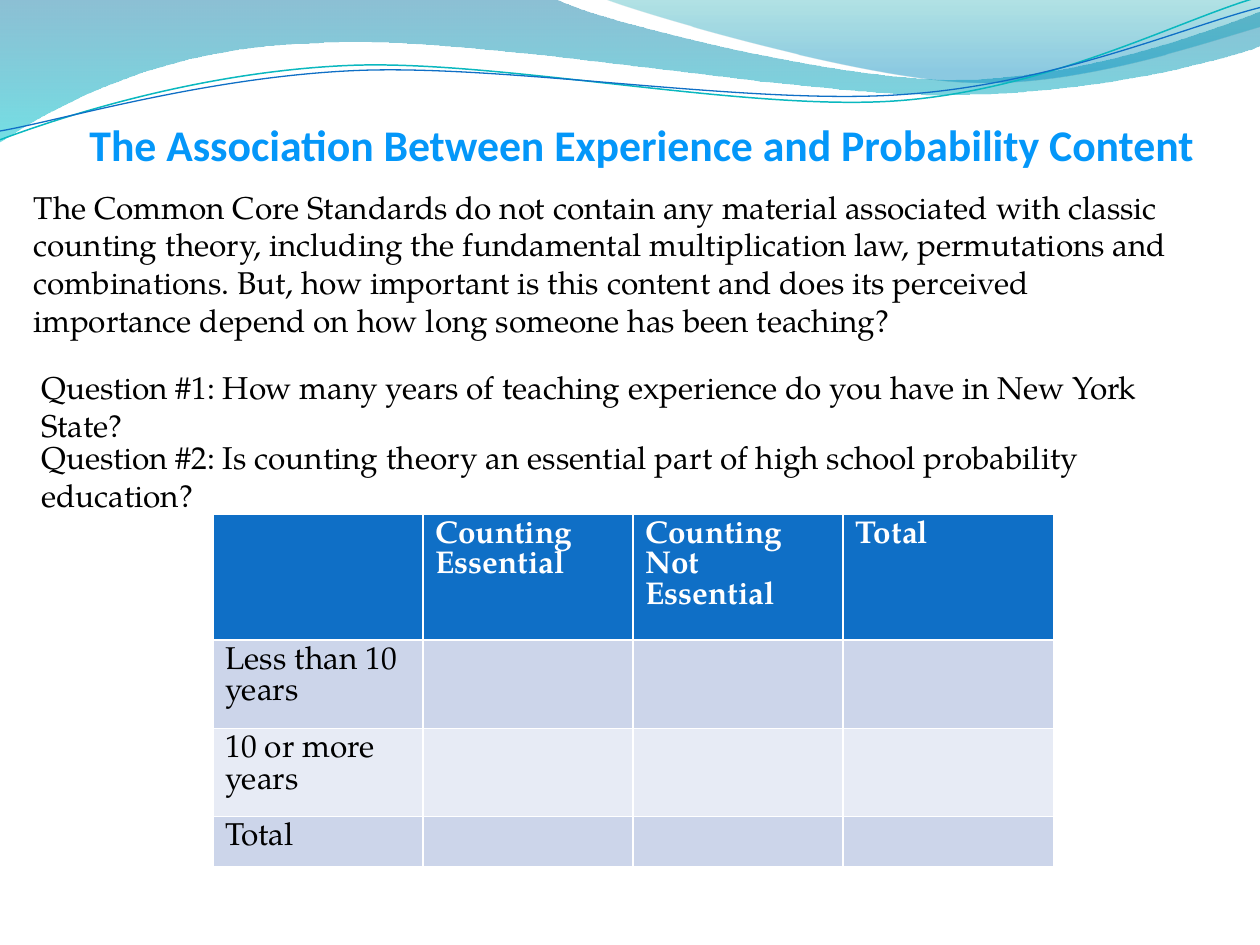
from dataclasses import dataclass

from lxml.etree import SubElement
from pptx import Presentation
from pptx.dml.color import RGBColor
from pptx.enum.text import MSO_ANCHOR
from pptx.oxml.ns import qn
from pptx.util import Cm, Pt

HUES = {
    "white": "FFFFFF", "black": "000000", "title": "0497F9", "blue": "0F6FC6",
    "teal": "0AB8BF", "deep": "0074A1", "aqua": "00C6CF", "sea": "00A1A9",
    "sky": "008BBF", "band": "CCD5EA", "pale": "E7EBF5",
}
SERIF = "TeX Gyre Pagella"
GRAIN = 1000


@dataclass
class Stop:
    """One gradient stop: place, hue and opacity in percent."""
    at: float
    hue: str
    alpha: int


@dataclass
class Wave:
    """A curved band or line, in inches; six numbers make a Bezier."""
    start: tuple
    steps: list
    stops: tuple = ()
    hue: str = ""
    width: float = 0


@dataclass
class Note:
    """A text box, in inches."""
    box: tuple
    text: str
    size: int = 18
    face: str = SERIF
    hue: str = "black"
    title: bool = False


WAVES = [
    Wave((0, 0), [
        (4.4, -0.01),
        (4.76, 0.17, 6.64, 0.63, 7.58, 0.63), (8.53, 0.63, 9.58, 0.26, 10, 0.09),
        (10.01, 0.36),
        (9.83, 0.44, 8.7, 0.76, 7.46, 0.75), (6.22, 0.75, 3.82, 0.28, 2.57, 0.34),
        (1.29, 0.36, 0.46, 0.83, -0.01, 1.13),
        (0, 0),
    ], stops=(Stop(0, "deep", 45), Stop(1, "aqua", 55))),
    Wave((4.79, -0.01), [
        (5.09, 0.11, 6.82, 0.62, 7.69, 0.65), (8.56, 0.69, 9.61, 0.32, 10, 0.21),
        (10, 0), (4.79, -0.01),
    ], stops=(Stop(0, "sea", 30), Stop(0.8, "sky", 45))),
    Wave((0, 1.11), [
        (0.48, 0.93, 1.58, 0.57, 2.77, 0.52), (3.95, 0.47, 5.93, 0.89, 7.13, 0.8),
        (8.33, 0.71, 9.38, 0.15, 9.98, -0.02),
    ], hue="teal", width=0.85),
    Wave((0, 1.04), [
        (0.47, 0.96, 1.64, 0.61, 2.83, 0.56), (4.03, 0.51, 5.97, 0.84, 7.17, 0.75),
        (8.36, 0.67, 9.41, 0.21, 10, 0.06),
    ], hue="blue", width=0.75),
]
NOTES = [
    Note((0.71, 0.1, 10.99, 1.25),
         "The Association Between Experience and Probability Content",
         25, "Calibri", "title", True),
    Note((0.17, 1.44, 9.39, 1.31),
         "The Common Core Standards do not contain any material associated with "
         "classic counting theory, including the fundamental multiplication law, "
         "permutations and combinations. But, how important is this content and "
         "does its perceived importance depend on how long someone has been teaching?"),
    Note((0.23, 2.87, 9.32, 0.4),
         "Question #1: How many years of teaching experience do you have in New York State?"),
    Note((0.23, 3.43, 9.57, 0.4),
         "Question #2: Is counting theory an essential part of high school "
         "probability education?"),
]
HEADS = ["", "Counting\nEssential", "Counting\nNot Essential", "Total"]
SIDES = ["Less than 10 years", "10 or more years", "Total"]
ROWS = [HEADS] + [[side, "", "", ""] for side in SIDES]
HIGHS = [1, 0.7, 0.7, 0.4]
FILLS = ["blue", "band", "pale", "band"]


def size(inch: float) -> Cm:
    """Turn inches into a length."""
    return Cm(inch * 2.54)


def color(hue: str) -> RGBColor:
    """Look up a hue."""
    return RGBColor.from_string(HUES[hue])


def bend(shape, steps: list) -> None:
    """Turn each run of three straight segments of a curved step into a Bezier."""
    lines = iter(list(shape._element.spPr.iter(qn("a:lnTo"))))
    for step in steps:
        group = [next(lines) for _ in range(len(step) // 2)]
        if len(group) == 3:
            first = group[0]
            cubic = SubElement(first.getparent(), qn("a:cubicBezTo"))
            first.addprevious(cubic)
            for line in group:
                cubic.append(line[0])
                line.getparent().remove(line)


def draw_wave(slide, wave: Wave) -> None:
    """Draw one wave as a filled band or an open line."""
    dots = [(step[i] * GRAIN, step[i + 1] * GRAIN)
            for step in wave.steps for i in range(0, len(step), 2)]
    left, top = wave.start
    pen = slide.shapes.build_freeform(left * GRAIN, top * GRAIN, size(1) / GRAIN)
    pen.add_line_segments(dots, close=bool(wave.stops))
    shape = pen.convert_to_shape()
    bend(shape, wave.steps)
    shape.shadow.inherit = False
    if not wave.stops:
        shape.fill.background()
        shape.line.color.rgb = color(wave.hue)
        shape.line.width = Pt(wave.width)
        return
    shape.line.fill.background()
    shape.fill.gradient()
    shape.fill.gradient_angle = 270
    for mark, stop in zip(shape.fill.gradient_stops, wave.stops):
        mark.position = stop.at
        mark.color.rgb = color(stop.hue)
    for node, stop in zip(shape._element.spPr.iter(qn("a:srgbClr")), wave.stops):
        SubElement(node, qn("a:alpha"), val=str(stop.alpha * 1000))


def style(para, points: int, face: str, hue: str, bold: bool) -> None:
    """Set the font of a paragraph."""
    font = para.font
    font.size, font.name, font.bold = Pt(points), face, bold
    font.color.rgb = color(hue)


def draw_note(slide, note: Note) -> None:
    """Draw one text box."""
    frame = slide.shapes.add_textbox(*map(size, note.box)).text_frame
    frame.word_wrap = True
    if note.title:
        frame.vertical_anchor = MSO_ANCHOR.BOTTOM
        frame.margin_left = frame.margin_right = frame.margin_bottom = 0
    frame.text = note.text
    style(frame.paragraphs[0], note.size, note.face, note.hue, note.title)


def draw_table(slide) -> None:
    """Draw the empty two-way table."""
    box = map(size, (1.69, 4.08, 6.67, sum(HIGHS)))
    table = slide.shapes.add_table(len(ROWS), len(HEADS), *box).table
    for r, texts in enumerate(ROWS):
        table.rows[r].height = size(HIGHS[r])
        for c, text in enumerate(texts):
            cell = table.cell(r, c)
            cell.fill.solid()
            cell.fill.fore_color.rgb = color(FILLS[r])
            cell.text = text
            for para in cell.text_frame.paragraphs:
                style(para, 18, SERIF, "black" if r else "white", r == 0)


def main() -> None:
    """Build the slide."""
    deck = Presentation()
    deck.slide_width, deck.slide_height = size(10), size(7.5)
    slide = deck.slides.add_slide(deck.slide_layouts[6])
    for wave in WAVES:
        draw_wave(slide, wave)
    for note in NOTES:
        draw_note(slide, note)
    draw_table(slide)
    deck.save("out.pptx")


if __name__ == "__main__":
    main()
